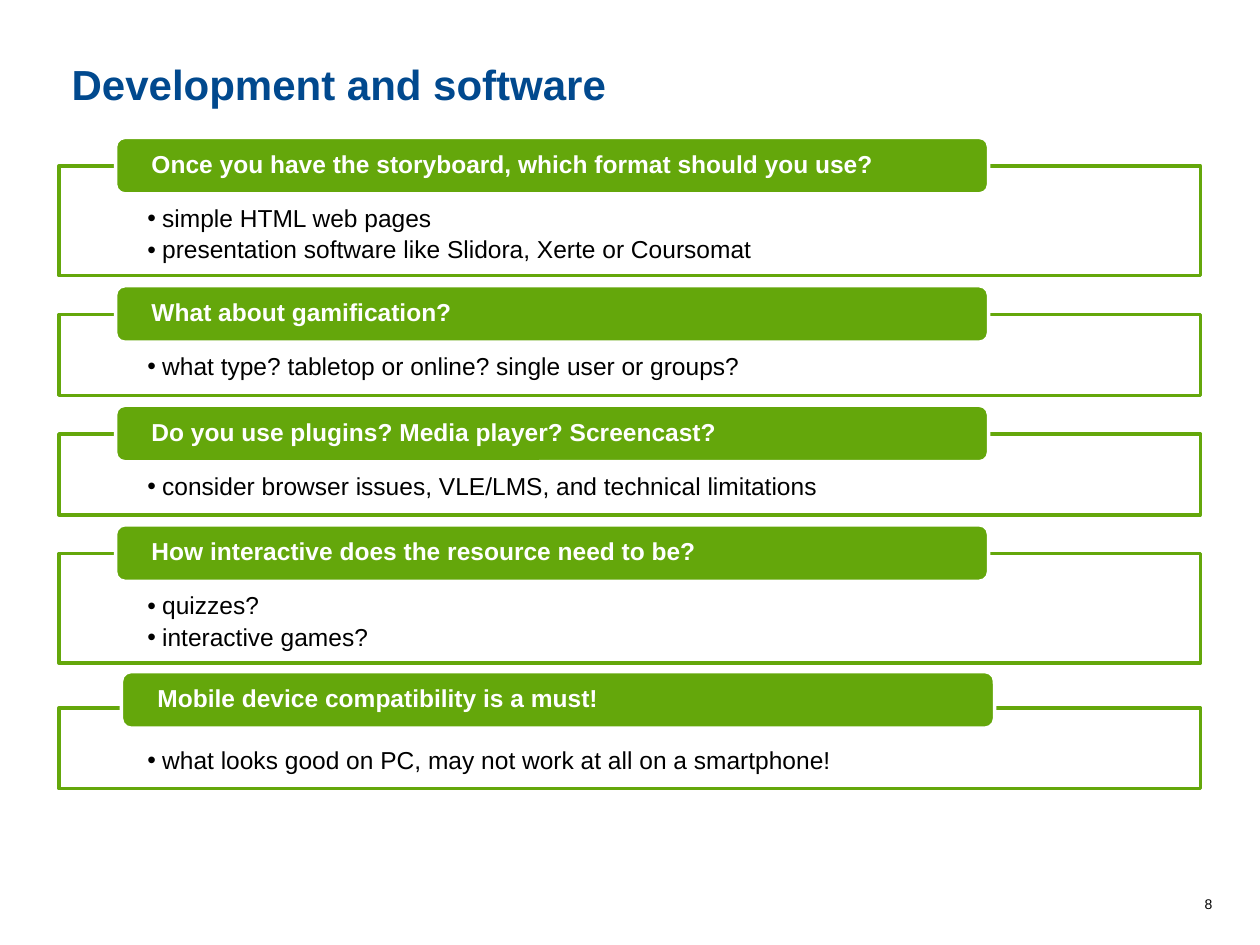
from dataclasses import dataclass

from lxml.etree import SubElement
from pptx import Presentation
from pptx.dml.color import RGBColor
from pptx.enum.shapes import MSO_SHAPE
from pptx.enum.text import MSO_ANCHOR, MSO_AUTO_SIZE, PP_ALIGN
from pptx.oxml.ns import qn
from pptx.shapes.autoshape import Shape
from pptx.slide import Slide
from pptx.text.text import TextFrame, _Paragraph
from pptx.util import Cm, Pt


@dataclass(frozen=True)
class Theme:
    font: str = "Arial"
    blue: RGBColor = RGBColor(0x01, 0x49, 0x8E)
    green: RGBColor = RGBColor(0x64, 0xA7, 0x0B)
    white: RGBColor = RGBColor(0xFF, 0xFF, 0xFF)
    black: RGBColor = RGBColor(0x00, 0x00, 0x00)
    title_size: int = 24
    text_size: int = 14
    number_size: int = 8
    line_width: int = 2


@dataclass(frozen=True)
class Topic:
    question: str
    points: tuple[str, ...]
    panel_shift: float = 0
    header_shift: tuple[float, float] = (0, 0)


THEME = Theme()

# Lengths in centimetres
LEFT, WIDTH = 1.19, 23.01
FIRST_TOP, GAP = 3.35, 0.78
PANEL_HEIGHT, EXTRA_LINE = 1.63, 0.58
HEADER_LEFT, HEADER_RISE = 2.33, 0.58
HEADER_WIDTH, HEADER_HEIGHT = 17.6, 1.14
BULLET_INDENT = 0.3

TOPICS = (
    Topic("Once you have the storyboard, which format should you use?",
          ("simple HTML web pages",
           "presentation software like Slidora, Xerte or Coursomat")),
    Topic("What about gamification?",
          ("what type? tabletop or online? single user or groups?",)),
    Topic("Do you use plugins? Media player? Screencast?",
          ("consider browser issues, VLE/LMS, and technical limitations",)),
    Topic("How interactive does the resource need to be?",
          ("quizzes?", "interactive games?")),
    Topic("Mobile device compatibility is a must!",
          ("what looks good on PC, may not work at all on a smartphone!",),
          panel_shift=0.12, header_shift=(0.12, -0.15)),
)


def style_text(frame: TextFrame, size: int, color: RGBColor, bold: bool = False) -> None:
    for paragraph in frame.paragraphs:
        for run in paragraph.runs:
            run.font.name = THEME.font
            run.font.size = Pt(size)
            run.font.bold = bold
            run.font.color.rgb = color


def set_margins(frame: TextFrame, left: float, top: float, right: float, bottom: float) -> None:
    frame.margin_left, frame.margin_top = Cm(left), Cm(top)
    frame.margin_right, frame.margin_bottom = Cm(right), Cm(bottom)


def add_bullet(paragraph: _Paragraph) -> None:
    properties = paragraph._p.get_or_add_pPr()
    properties.set("marL", str(Cm(BULLET_INDENT)))
    properties.set("indent", str(-Cm(BULLET_INDENT)))
    SubElement(properties, qn("a:buFont"), typeface=THEME.font)
    SubElement(properties, qn("a:buChar"), char="•")


def add_box(page: Slide, kind: MSO_SHAPE, left: float, top: float, width: float,
            height: float, fill: RGBColor, line: RGBColor) -> Shape:
    box = page.shapes.add_shape(kind, Cm(left), Cm(top), Cm(width), Cm(height))
    box.shadow.inherit = False
    box.fill.solid()
    box.fill.fore_color.rgb = fill
    box.line.color.rgb = line
    box.line.width = Pt(THEME.line_width)
    box.text_frame.word_wrap = True
    return box


def add_panel(page: Slide, topic: Topic, top: float, height: float) -> None:
    panel = add_box(page, MSO_SHAPE.RECTANGLE, LEFT, top, WIDTH, height,
                    THEME.white, THEME.green)
    fill_color = panel._element.spPr.find(qn("a:solidFill"))[0]
    SubElement(fill_color, qn("a:alpha"), val="90000")
    frame = panel.text_frame
    frame.vertical_anchor = MSO_ANCHOR.TOP
    set_margins(frame, 1.78, 0.81, 1.78, 0.28)
    frame.text = "\n".join(topic.points)
    for paragraph in frame.paragraphs:
        add_bullet(paragraph)
        paragraph.alignment = PP_ALIGN.LEFT
        paragraph.line_spacing = 0.9
        paragraph.space_after = Pt(2.8)
    style_text(frame, THEME.text_size, THEME.black)


def add_header(page: Slide, topic: Topic, panel_top: float) -> None:
    shift_x, shift_y = topic.header_shift
    header = add_box(page, MSO_SHAPE.ROUNDED_RECTANGLE, HEADER_LEFT + shift_x,
                     panel_top - HEADER_RISE + shift_y, HEADER_WIDTH, HEADER_HEIGHT,
                     THEME.green, THEME.white)
    frame = header.text_frame
    frame.vertical_anchor = MSO_ANCHOR.MIDDLE
    set_margins(frame, 0.67, 0, 0.67, 0)
    frame.text = topic.question
    frame.paragraphs[0].alignment = PP_ALIGN.LEFT
    frame.paragraphs[0].line_spacing = 0.9
    style_text(frame, THEME.text_size, THEME.white, bold=True)


def add_topics(page: Slide) -> None:
    top = FIRST_TOP
    for topic in TOPICS:
        top += topic.panel_shift
        height = PANEL_HEIGHT + EXTRA_LINE * (len(topic.points) - 1)
        add_panel(page, topic, top, height)
        add_header(page, topic, top)
        top += height + GAP


def set_title(page: Slide, text: str) -> None:
    title = page.shapes.title
    title.left, title.top, title.width, title.height = Cm(LEFT), Cm(1.05), Cm(WIDTH), Cm(1.27)
    frame = title.text_frame
    frame.text = text
    frame.auto_size = MSO_AUTO_SIZE.NONE
    frame.vertical_anchor = MSO_ANCHOR.MIDDLE
    frame.paragraphs[0].alignment = PP_ALIGN.LEFT
    style_text(frame, THEME.title_size, THEME.blue, bold=True)


def add_page_number(page: Slide, number: str) -> None:
    frame = page.shapes.add_textbox(Cm(13.69), Cm(17.93), Cm(11), Cm(0.61)).text_frame
    frame.word_wrap = True
    frame.text = number
    frame.paragraphs[0].alignment = PP_ALIGN.RIGHT
    style_text(frame, THEME.number_size, THEME.black)


def main() -> None:
    deck = Presentation()
    deck.slide_width, deck.slide_height = Cm(25.4), Cm(19.05)
    page = deck.slides.add_slide(deck.slide_layouts.get_by_name("Title Only"))
    add_page_number(page, "8")
    set_title(page, "Development and software")
    add_topics(page)
    deck.save("out.pptx")


if __name__ == "__main__":
    main()
